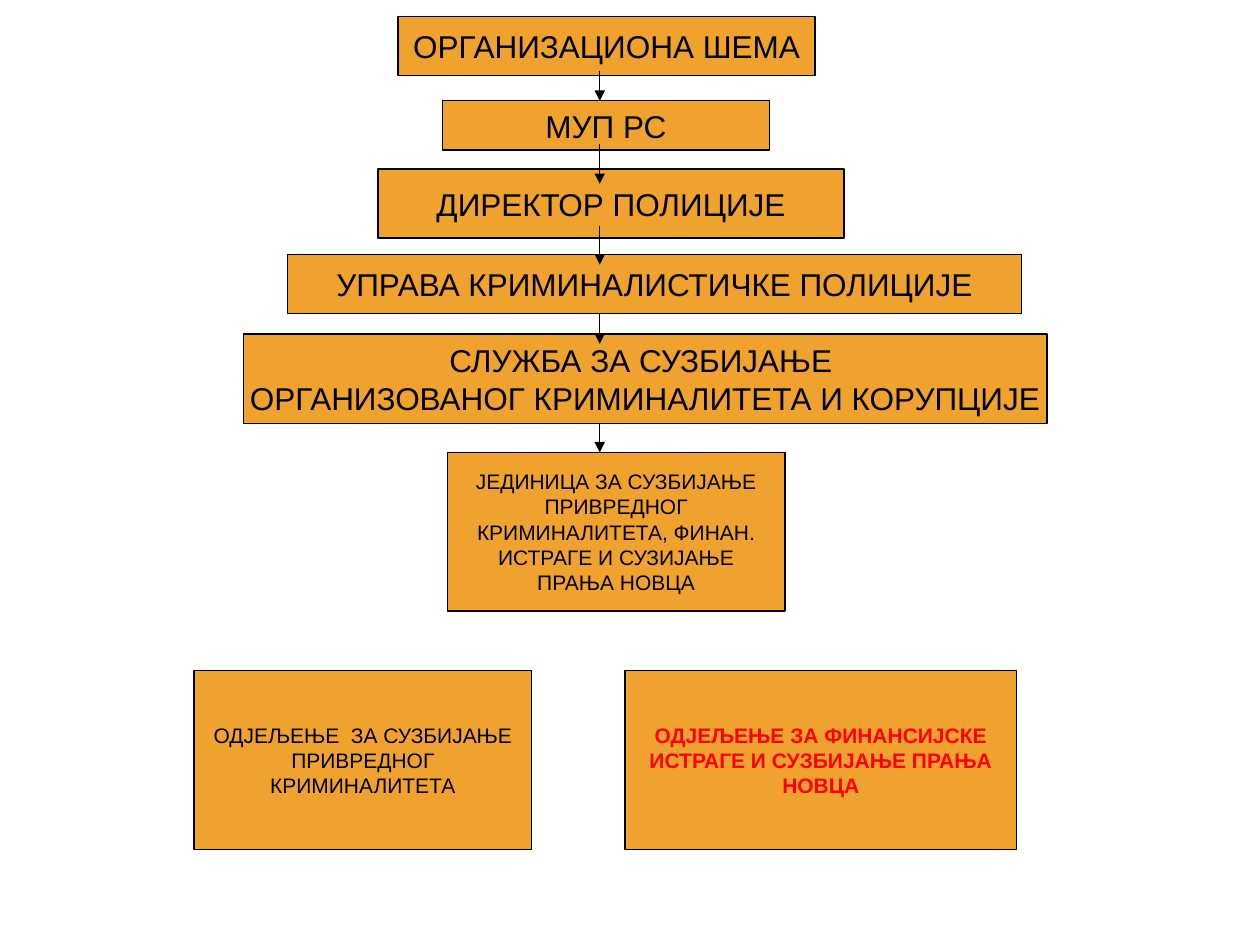
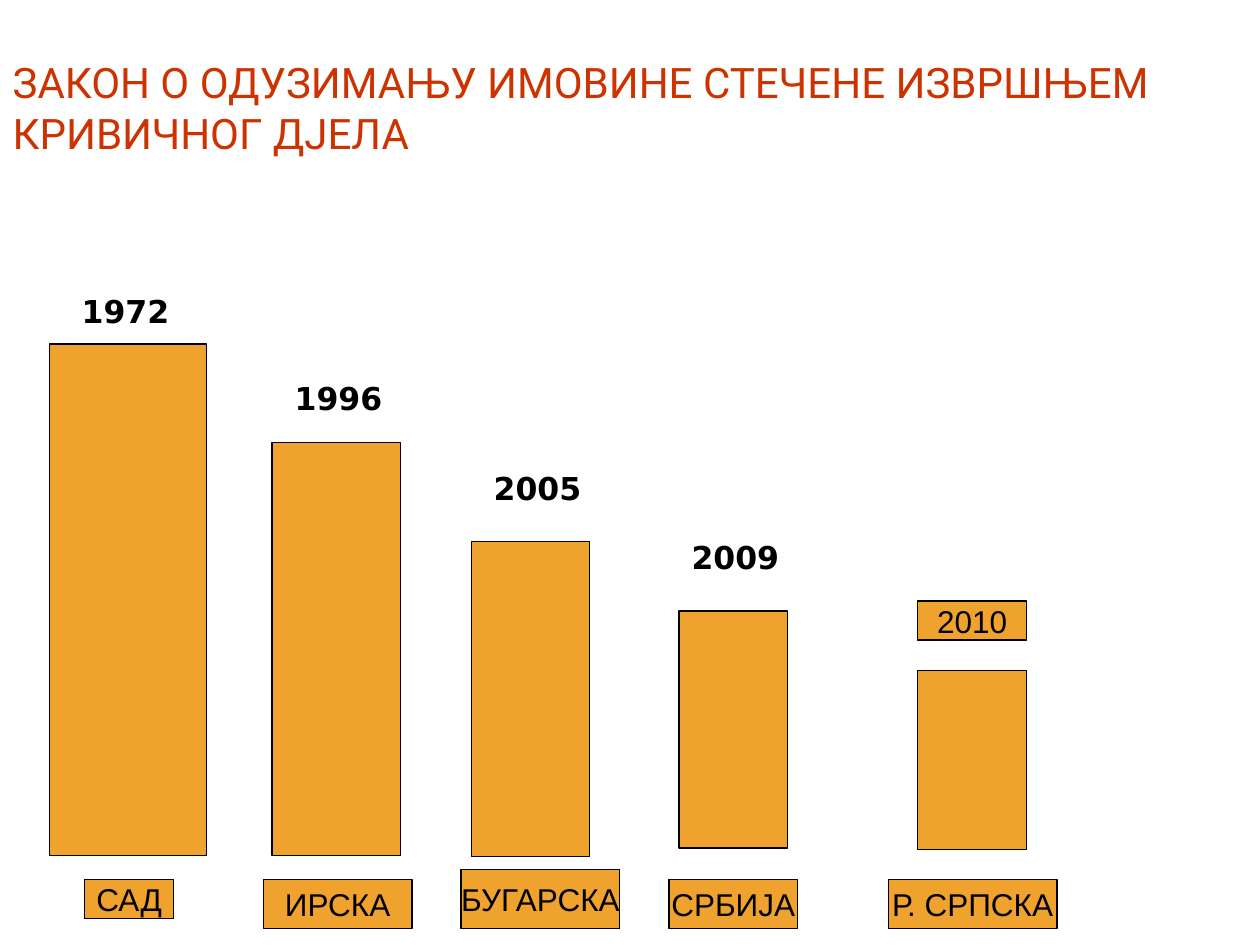
import pptx
import pptx.util
import pptx.dml.color
import pptx.enum.shapes
import pptx.enum.text
import pptx.oxml
import pptx.oxml.ns
import lxml.etree

Inches = pptx.util.Inches
Pt = pptx.util.Pt
CENTER = pptx.enum.text.PP_ALIGN.CENTER
LEFT = pptx.enum.text.PP_ALIGN.LEFT
MIDDLE = pptx.enum.text.MSO_ANCHOR.MIDDLE
NO_RESIZE = pptx.enum.text.MSO_AUTO_SIZE.NONE

AMBER, BLACK, RED, RUST, WHITE = "F0A22E", "000000", "FF0000", "CC3300", "FFFFFF"
LINE_WIDTH = 0.75
LARGE = {"name": "Arial", "size": Pt(18), "bold": False}
SMALL = {"name": "Arial", "size": Pt(12), "bold": False}
SMALL_BOLD = {**SMALL, "bold": True}
YEAR = {"name": "DejaVu Sans", "size": Pt(18), "bold": True}
TITLE = {"name": "Roboto", "size": Pt(24), "bold": False}

ORG_AREA = (1.54, 0.13, 6.77, 6.61)
ORG_BOXES = [
    ("ОРГАНИЗАЦИОНА ШЕМА", (1.62, 0, 3.31, 0.47)),
    ("МУП РС", (1.97, 0.67, 2.6, 0.39)),
    ("ДИРЕКТОР ПОЛИЦИЈЕ", (1.46, 1.21, 3.7, 0.55)),
    ("УПРАВА КРИМИНАЛИСТИЧКЕ ПОЛИЦИЈЕ", (0.74, 1.89, 5.83, 0.47)),
    ("СЛУЖБА ЗА СУЗБИЈАЊЕ \nОРГАНИЗОВАНОГ КРИМИНАЛИТЕТА И КОРУПЦИЈЕ",
     (0.39, 2.52, 6.38, 0.71)),
]
UNIT_BOXES = [
    ("ЈЕДИНИЦА ЗА СУЗБИЈАЊЕ ПРИВРЕДНОГ КРИМИНАЛИТЕТА, ФИНАН. "
     "ИСТРАГЕ И СУЗИЈАЊЕ ПРАЊА НОВЦА", (2.01, 3.46, 2.68, 1.26), SMALL, BLACK),
    ("ОДЈЕЉЕЊЕ  ЗА СУЗБИЈАЊЕ ПРИВРЕДНОГ КРИМИНАЛИТЕТА",
     (0, 5.19, 2.68, 1.42), SMALL, BLACK),
    ("ОДЈЕЉЕЊЕ ЗА ФИНАНСИЈСКЕ ИСТРАГЕ И СУЗБИЈАЊЕ ПРАЊА НОВЦА",
     (3.42, 5.19, 3.11, 1.42), SMALL_BOLD, RED),
]
ARROW_LEFT = 3.22
ARROW_SPANS = [(0.43, 0.67), (1.01, 1.33), (1.66, 1.97), (2.36, 2.6), (3.23, 3.46)]

TITLE_AREA = (0, 0, 10, 1.7)
COLUMN_AREA = (0.39, 2.27, 8, 5.1)
COLUMNS = [
    ("САД", (0.28, 4.71, 0.71, 0.31), (0, 0.46, 1.25, 4.06)),
    ("ИРСКА", (1.7, 4.71, 1.18, 0.39), (1.77, 1.24, 1.02, 3.28)),
    ("БУГАРСКА", (3.27, 4.63, 1.26, 0.47), (3.35, 2.03, 0.94, 2.5)),
    ("СРБИЈА", (4.92, 4.71, 1.02, 0.39), (5, 2.58, 0.86, 1.88)),
    ("Р. СРПСКА", (6.66, 4.71, 1.34, 0.39), (6.89, 3.05, 0.87, 1.42)),
]
YEARS = [
    ("1972", (0.16, 0, 0.92, 0.4)),
    ("1996", (1.85, 0.69, 0.91, 0.4)),
    ("2005", (3.43, 1.4, 0.91, 0.4)),
    ("2009", (5, 1.95, 0.91, 0.4)),
]
BOXED_YEAR = ("2010", (6.89, 2.5, 0.87, 0.31))


def color(code):
    return pptx.dml.color.RGBColor.from_string(code)


def within(area, box):
    left, top, width, height = box
    return area[0] + left, area[1] + top, width, height


def lengths(box):
    return [Inches(value) for value in box]


def write(frame, text, style, code, align, wrap):
    frame.word_wrap = wrap
    frame.text = text
    for para in frame.paragraphs:
        para.alignment = align
        for span in para.runs:
            for name, value in style.items():
                setattr(span.font, name, value)
            span.font.color.rgb = color(code)


def add_box(page, box, text="", style=LARGE, code=BLACK, wrap=False):
    shape = page.shapes.add_shape(
        pptx.enum.shapes.MSO_SHAPE.RECTANGLE, *lengths(box))
    shape.shadow.inherit = False
    shape.fill.solid()
    shape.fill.fore_color.rgb = color(AMBER)
    shape.line.color.rgb = color(BLACK)
    shape.line.width = Pt(LINE_WIDTH)
    if text:
        shape.text_frame.vertical_anchor = MIDDLE
        write(shape.text_frame, text, style, code, CENTER, wrap)


def add_arrow(page, left, top, bottom):
    arrow = page.shapes.add_connector(
        pptx.enum.shapes.MSO_CONNECTOR.STRAIGHT,
        *lengths((left, top, left, bottom)))
    arrow.line.color.rgb = color(BLACK)
    arrow.line.width = Pt(LINE_WIDTH)
    qn = pptx.oxml.ns.qn
    line = arrow.line._get_or_add_ln()
    lxml.etree.SubElement(line, qn("a:tailEnd"), type="triangle")
    lxml.etree.SubElement(arrow._element.spPr, qn("a:effectLst"))


def draw_org_chart(page, area):
    for text, box in ORG_BOXES:
        add_box(page, within(area, box), text)
    for text, box, style, code in UNIT_BOXES:
        add_box(page, within(area, box), text, style, code, True)
    for top, bottom in ARROW_SPANS:
        add_arrow(page, area[0] + ARROW_LEFT, area[1] + top, area[1] + bottom)


def draw_title(page, area, text):
    title = page.shapes.title
    title.left, title.top, title.width, title.height = lengths(area)
    title.fill.solid()
    title.fill.fore_color.rgb = color(WHITE)
    title.text_frame.auto_size = NO_RESIZE
    title.text_frame.vertical_anchor = MIDDLE
    write(title.text_frame, text, TITLE, RUST, LEFT, True)


def draw_columns(page, area):
    for country, label_box, bar_box in COLUMNS:
        add_box(page, within(area, bar_box))
        add_box(page, within(area, label_box), country)
    for year, box in YEARS:
        caption = page.shapes.add_textbox(*lengths(within(area, box)))
        write(caption.text_frame, year, YEAR, BLACK, LEFT, False)
    year, box = BOXED_YEAR
    add_box(page, within(area, box), year)


def main():
    deck = pptx.Presentation()
    deck.slide_width, deck.slide_height = Inches(10), Inches(7.5)
    title_only, blank = deck.slide_layouts[5], deck.slide_layouts[6]

    draw_org_chart(deck.slides.add_slide(blank), ORG_AREA)

    page = deck.slides.add_slide(title_only)
    draw_title(page, TITLE_AREA,
               "ЗАКОН О ОДУЗИМАЊУ ИМОВИНЕ СТЕЧЕНЕ ИЗВРШЊЕМ КРИВИЧНОГ ДЈЕЛА")
    draw_columns(page, COLUMN_AREA)

    deck.save("out.pptx")


if __name__ == "__main__":
    main()
